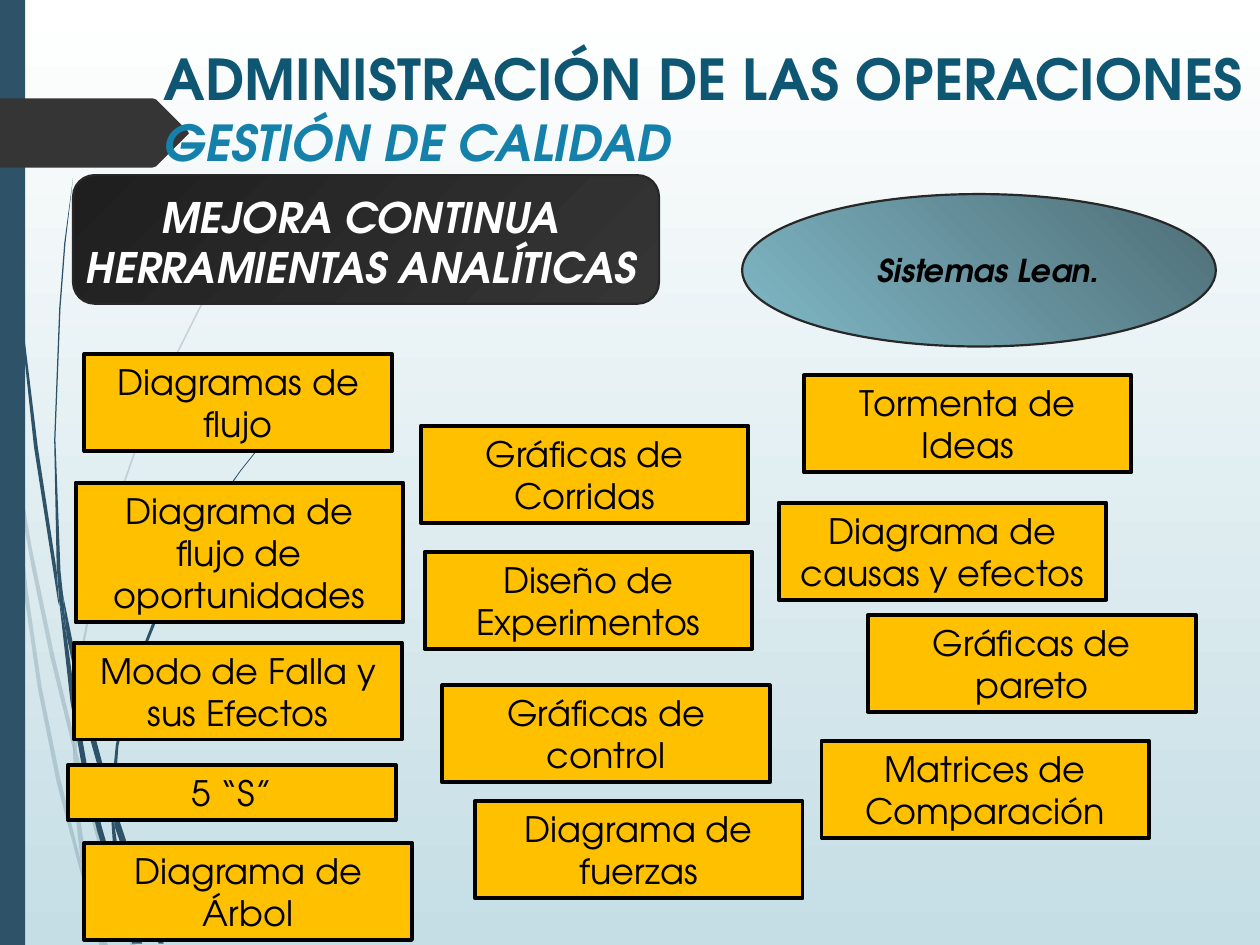
import pptx
import pptx.dml.color
import pptx.enum.shapes
import pptx.enum.text
import pptx.oxml
import pptx.oxml.ns
import pptx.util

Inches = pptx.util.Inches
Kind = pptx.enum.shapes.MSO_SHAPE
Align = pptx.enum.text.PP_ALIGN
FACE = "TeX Gyre Adventor"
TEAL = "2E5369"
EDGE = "272727"

# Font formats
CARD = {"size": 20, "color": "000000"}
HEAD = {"size": 24, "color": "FFFFFF", "bold": True, "italic": True}
LEAN = {"size": 18, "color": "000000", "bold": True, "italic": True}
TOP = {"size": 32.2, "color": "0E5672", "bold": True}
SUB = {"size": 28.3, "color": "1581AA", "bold": True, "italic": True}

# Cards: text, left, top, width, height
CARDS = [
    ("Diagramas de flujo", 0.67, 2.81, 2.44, 0.77),
    ("Gráficas de control", 3.51, 5.44, 2.6, 0.77),
    ("Gráficas de pareto", 6.89, 4.88, 2.6, 0.77),
    ("Diagrama de causas y efectos", 6.18, 3.99, 2.6, 0.77),
    ("Gráficas de Corridas", 3.34, 3.38, 2.6, 0.77),
    ("Diagrama de flujo de oportunidades", 0.6, 3.83, 2.6, 1.11),
    ("Modo de Falla y sus Efectos", 0.59, 5.1, 2.6, 0.77),
    ("Diseño de Experimentos", 3.37, 4.38, 2.6, 0.77),
    ("Matrices de Comparación", 6.52, 5.88, 2.6, 0.77),
    ("Diagrama de fuerzas", 3.77, 6.36, 2.6, 0.77),
    ("Diagrama de Árbol", 0.67, 6.69, 2.6, 0.77),
    ("Tormenta de Ideas", 6.38, 2.98, 2.6, 0.77),
    ("5 “S”", 0.54, 6.07, 2.6, 0.44),
]

# Outlines of the curved stems, as corner points
PALE = [
    [(0.08, 3.5), (0.06, 3.22), (0, 2.82), (0, 2.99), (0.07, 3.44)],
    [(0.4, 5.22), (0.59, 5.99), (0.59, 5.86), (0.43, 5.2), (0.25, 4.34),
     (0.1, 3.45), (0.12, 3.76), (0.25, 4.5)],
    [(0.64, 6.07), (0.61, 5.96), (0.61, 6.1), (0.85, 6.94), (1.04, 7.51),
     (1.08, 7.51), (0.88, 6.92)],
    [(0.83, 7.51), (0.86, 7.51), (0.73, 7.11)],
    [(0.64, 6.83), (0.48, 6.19), (0.33, 5.45), (0.22, 4.69), (0.12, 3.76),
     (0.08, 3.5), (0.19, 4.7), (0.3, 5.46), (0.45, 6.21), (0.64, 6.93),
     (0.7, 7.14), (0.69, 7.07)],
    [(0.58, 5.99), (0.6, 6.46), (0.64, 6.83), (0.73, 7.11), (0.63, 6.46),
     (0.61, 6.1)],
    [(0.61, 5.84), (0.65, 5.22), (0.76, 4.62), (0.92, 4.04), (1.11, 3.49),
     (1.34, 2.95), (1.59, 2.45), (1.87, 1.98), (2.01, 1.75), (2.17, 1.54),
     (2.17, 1.53), (2.01, 1.75), (1.86, 1.97), (1.58, 2.44), (1.33, 2.94),
     (1.1, 3.48), (0.91, 4.03), (0.75, 4.61), (0.63, 5.22), (0.59, 5.84),
     (0.61, 5.96)],
    [(0.7, 7.14), (0.79, 7.51), (0.82, 7.51)],
    [(0.61, 6.08), (0.61, 5.96), (0.59, 5.86), (0.58, 5.99)],
    [(0.67, 6.92), (0.65, 6.83), (0.7, 7.14), (0.82, 7.51), (0.83, 7.51),
     (0.73, 7.11)],
]
DARK = [
    [(0.05, 1.1), (0.14, 2.33), (0.27, 3.55), (0.46, 4.77), (0.47, 4.81),
     (0.45, 4.53), (0.3, 3.55), (0.15, 2.32), (0.06, 1.09), (0.04, 0.48),
     (0.03, 0), (0.02, 0), (0.03, 0.48)],
    [(0.73, 5.92), (0.88, 6.45), (0.88, 6.31), (0.77, 5.9), (0.62, 5.31),
     (0.5, 4.72), (0.53, 5.05), (0.62, 5.49)],
    [(0.94, 6.49), (0.91, 6.41), (0.91, 6.56), (1.09, 7.08), (1.26, 7.49),
     (1.3, 7.49), (1.13, 7.06)],
    [(0.91, 6.91), (0.81, 6.57), (0.69, 6.07), (0.6, 5.56), (0.53, 5.05),
     (0.47, 4.77), (0.56, 5.57), (0.65, 6.08), (0.77, 6.59), (0.92, 7.08),
     (0.97, 7.22), (0.96, 7.17)],
    [(0.5, 4.72), (0.48, 4.53), (0.44, 3.49), (0.48, 2.45), (0.52, 1.93),
     (0.58, 1.41), (0.51, 1.93), (0.47, 2.45), (0.43, 3.49), (0.45, 4.49),
     (0.49, 4.72)],
    [(1.1, 7.49), (1.13, 7.49), (1, 7.19)],
    [(0.47, 4.77), (0.53, 5.05), (0.5, 4.72), (0.45, 4.49)],
    [(0.91, 6.33), (0.94, 5.92), (1.03, 5.52), (1.16, 5.13), (1.31, 4.76),
     (1.49, 4.4), (1.69, 4.06), (1.91, 3.74), (2.03, 3.59), (2.16, 3.44),
     (2.15, 3.44), (2.03, 3.58), (1.91, 3.73), (1.68, 4.05), (1.48, 4.39),
     (1.29, 4.74), (1.14, 5.12), (1.01, 5.51), (0.92, 5.91), (0.88, 6.31),
     (0.91, 6.41)],
    [(0.97, 7.22), (1.05, 7.49), (1.08, 7.49)],
    [(0.88, 6.45), (0.91, 6.91), (1, 7.19), (0.91, 6.56)],
    [(0.88, 6.45), (0.91, 6.56), (0.91, 6.41), (0.88, 6.31)],
    [(0.96, 7.06), (0.91, 6.91), (0.97, 7.22), (1.08, 7.49), (1.1, 7.49),
     (1, 7.19)],
]
TAG = [(0, 0.78), (1.21, 0.78), (1.24, 0.79), (1.49, 1.04), (1.5, 1.06),
       (1.49, 1.07), (1.24, 1.32), (1.21, 1.33), (0, 1.33)]


def hue(code):
    return pptx.dml.color.RGBColor.from_string(code)


def paint(fill, color, angle=0):
    """Solid for one hex string, gradient for a pair."""
    if isinstance(color, str):
        fill.solid()
        fill.fore_color.rgb = hue(color)
        return
    fill.gradient()
    fill.gradient_angle = 360 - angle
    for stop, code in zip(fill.gradient_stops, color):
        stop.color.rgb = hue(code)


def dress(shape, color, edge=None, width=0, angle=0):
    shape.shadow.inherit = False
    paint(shape.fill, color, angle)
    if edge:
        shape.line.color.rgb = hue(edge)
        shape.line.width = pptx.util.Pt(width)
    else:
        shape.line.fill.background()


def put(slide, kind, box, *look):
    shape = slide.shapes.add_shape(kind, *map(Inches, box))
    dress(shape, *look)
    return shape


def trace(slide, dots, color, alpha=None):
    dots = [(Inches(x), Inches(y)) for x, y in dots]
    pen = slide.shapes.build_freeform(*dots[0])
    pen.add_line_segments(dots[1:], close=True)
    shape = pen.convert_to_shape()
    dress(shape, color)
    if alpha:
        node = shape.element.spPr.find(".//" + pptx.oxml.ns.qn("a:srgbClr"))
        tag = pptx.oxml.parse_xml(
            f'<a:alpha {pptx.oxml.ns.nsdecls("a")} val="{alpha * 1000}"/>')
        node.append(tag)


def write(para, text, style):
    run = para.add_run()
    run.text = text
    form = dict(style, name=FACE, size=pptx.util.Pt(style["size"]))
    run.font.color.rgb = hue(form.pop("color"))
    for key, value in form.items():
        setattr(run.font, key, value)


def fill_text(shape, lines, style, before=0):
    frame = shape.text_frame
    frame.word_wrap = True
    for i, line in enumerate(lines):
        para = frame.add_paragraph() if i else frame.paragraphs[0]
        para.alignment = Align.CENTER
        para.space_before = pptx.util.Pt(before)
        write(para, line, style)


def label(slide, box, *text):
    fill_text(slide.shapes.add_textbox(*map(Inches, box)), *text)


def set_title(slide):
    title = slide.shapes.title
    box = {"left": 1.2, "top": 0.3, "width": 8.92, "height": 1.4}
    for key, value in box.items():
        setattr(title, key, Inches(value))
    frame = title.text_frame
    frame.auto_size = pptx.enum.text.MSO_AUTO_SIZE.NONE
    frame.vertical_anchor = pptx.enum.text.MSO_ANCHOR.TOP
    para = frame.paragraphs[0]
    para.alignment = Align.LEFT
    write(para, "ADMINISTRACIÓN DE LAS OPERACIONES", TOP)
    para.add_line_break()
    write(para, "GESTIÓN DE CALIDAD", SUB)
    # Bring the title in front of the side tag
    title.element.getparent().append(title.element)


def main():
    deck = pptx.Presentation()
    deck.slide_width, deck.slide_height = Inches(10), Inches(7.5)
    slide = deck.slides.add_slide(deck.slide_layouts[5])

    # Backdrop: gradient, stems, side bar and tag
    paint(slide.background.fill, ("FFFFFF", "C5DEE5"), 90)
    for dots in PALE:
        trace(slide, dots, TEAL, 20)
    for dots in DARK:
        trace(slide, dots, TEAL)
    put(slide, Kind.RECTANGLE, (0, 0, 0.2, 7.5), TEAL)
    trace(slide, TAG, "353535")

    # Heading of the tools
    put(slide, Kind.ROUNDED_RECTANGLE, (0.58, 1.39, 4.65, 1.02),
        ("1F1F1F", "353535"), EDGE, 1.25, 45)
    label(slide, (0.5, 1.47, 4.73, 0.91),
          ["MEJORA CONTINUA", "HERRAMIENTAS ANALÍTICAS"], HEAD)

    # Tool cards
    for text, *box in CARDS:
        card = put(slide, Kind.RECTANGLE, box, "FFC000", "000000", 2.25)
        fill_text(card, [text], CARD)

    # Title and Lean oval
    set_title(slide)
    put(slide, Kind.OVAL, (5.89, 1.54, 3.76, 1.21),
        ("4D6D76", "81B9C7"), EDGE, 1.25, 135)
    label(slide, (5.97, 1.94, 3.75, 0.4), ["Sistemas Lean."], LEAN, 6)
    deck.save("out.pptx")


if __name__ == "__main__":
    main()
